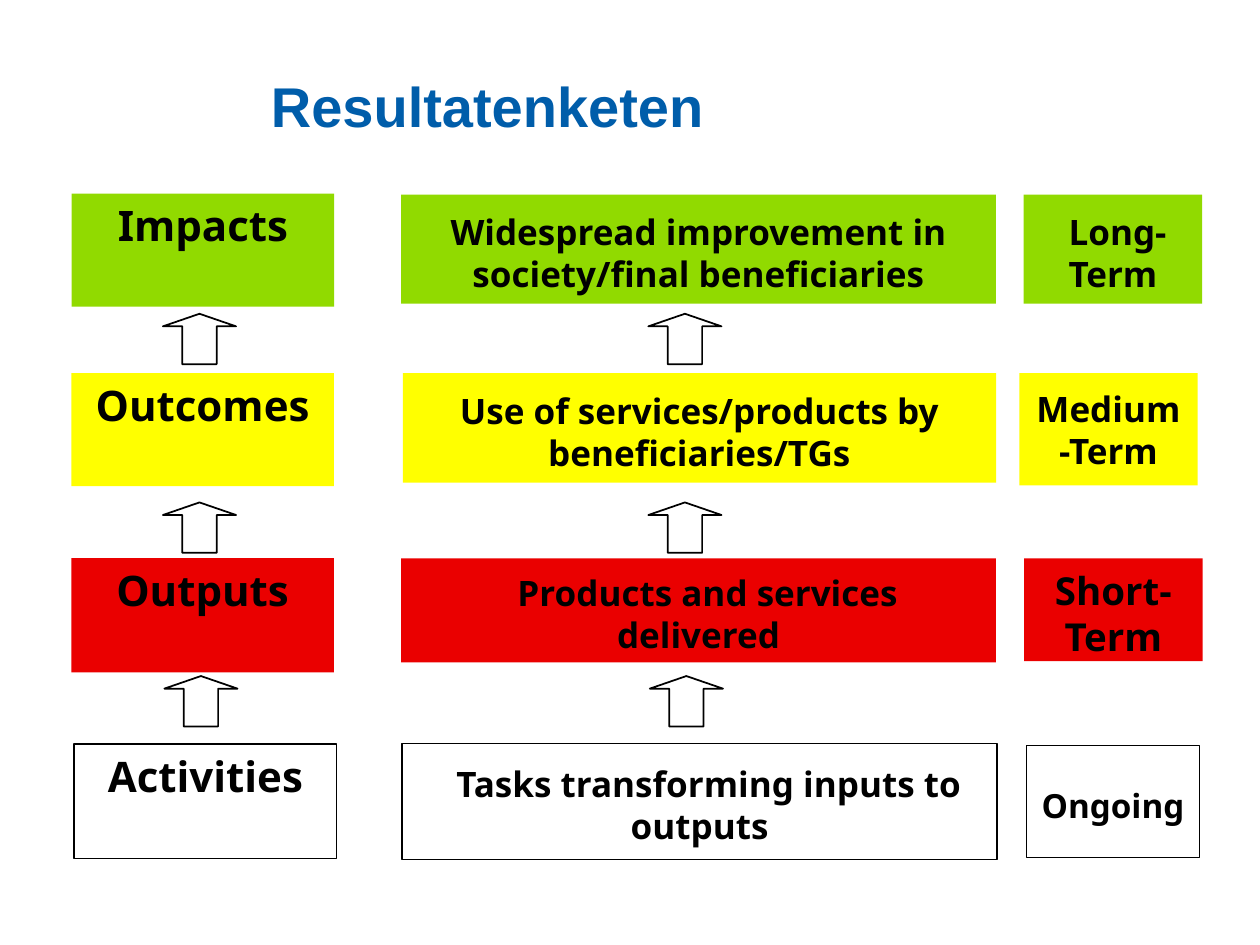
from pptx import Presentation
from pptx.dml.color import RGBColor
from pptx.enum.shapes import MSO_SHAPE as Shape
from pptx.enum.text import MSO_ANCHOR as Anchor, MSO_AUTO_SIZE as AutoSize, PP_ALIGN as Align
from pptx.util import Pt

BLUE = RGBColor(0x00, 0x5D, 0xAA)
GREEN = RGBColor(0x91, 0xDA, 0x00)
YELLOW = RGBColor(0xFF, 0xFF, 0x00)
RED = RGBColor(0xEA, 0x00, 0x00)
BLACK = RGBColor(0x00, 0x00, 0x00)


class ChainSlide:
    title_font = "Arial"
    body_font = "Noto Sans"

    def __init__(self, deck):
        self.page = deck.slides.add_slide(deck.slide_layouts[5])

    def add_text(self, para, text, font, size, color):
        span = para.add_run()
        span.text = text
        span.font.name = font
        span.font.size = Pt(size)
        span.font.bold = True
        span.font.color.rgb = color

    def title(self, text, left, top, width, height):
        box = self.page.shapes.title
        box.left, box.top, box.width, box.height = map(Pt, (left, top, width, height))
        frame = box.text_frame
        frame.auto_size = AutoSize.NONE
        frame.vertical_anchor = Anchor.BOTTOM
        para = frame.paragraphs[0]
        para.alignment = Align.LEFT
        self.add_text(para, text, self.title_font, 32, BLUE)

    def shape(self, kind, place, fill=None, line=None):
        shape = self.page.shapes.add_shape(kind, *map(Pt, place))
        shape.shadow.inherit = False
        if fill is None:
            shape.fill.background()
        else:
            shape.fill.solid()
            shape.fill.fore_color.rgb = fill
        if line is None:
            shape.line.fill.background()
        else:
            shape.line.color.rgb = BLACK
            shape.line.width = Pt(line)
        return shape

    def box(self, text, place, size, fill=None, line=None,
            anchor=Anchor.MIDDLE, inset=7.2, indent=0):
        frame = self.shape(Shape.RECTANGLE, place, fill, line).text_frame
        frame.word_wrap = True
        frame.vertical_anchor = anchor
        frame.margin_left = frame.margin_right = Pt(7.2)
        frame.margin_top, frame.margin_bottom = Pt(inset), Pt(3.6)
        para = frame.paragraphs[0]
        para.alignment = Align.CENTER
        if indent:
            para._p.get_or_add_pPr().set("indent", str(Pt(indent)))
        self.add_text(para, text, self.body_font, size, BLACK)

    def level(self, text, place, fill, line):
        self.box(text, place, 24, fill, line, anchor=Anchor.TOP, inset=3.6)

    def up_arrow(self, left, top):
        arrow = self.shape(Shape.RIGHT_ARROW, (left, top, 28.8, 41.8), line=1)
        arrow.rotation = 270
        arrow.adjustments[0] = 0.47
        arrow.adjustments[1] = 0.25


def main():
    deck = Presentation()
    deck.slide_width, deck.slide_height = Pt(720), Pt(540)
    chain = ChainSlide(deck)
    chain.title("Resultatenketen", 147.6, 28.8, 540, 54)

    levels = [
        ("Impacts", (41, 110.7, 150, 64.6), GREEN, None),
        ("Outcomes", (40.8, 213.2, 150, 64.6), YELLOW, None),
        ("Outputs", (40.8, 318.9, 150, 65.4), RED, None),
        ("Activities", (42.4, 425.2, 150, 65.4), None, 1),
    ]
    for level in levels:
        chain.level(*level)

    descriptions = [
        ("Widespread improvement in society/final beneficiaries",
         (229.2, 111.3, 340, 62.3), GREEN, None, 0),
        ("Use of services/products by beneficiaries/TGs",
         (230.2, 213.2, 339, 62.6), YELLOW, None, 0),
        ("Products and services delivered",
         (229.2, 319.1, 340, 59.4), RED, None, 10.4),
        ("Tasks transforming inputs to outputs",
         (229.8, 424.9, 340, 66.3), None, 0.75, 10.4),
    ]
    for text, place, fill, line, indent in descriptions:
        chain.box(text, place, 20, fill, line, indent=indent)

    terms = [
        ("Long- Term", (585, 111.3, 102, 62.3), 20, GREEN, None, 7.2, 5.2),
        ("Medium-Term", (582.5, 213.2, 102, 64.3), 20, YELLOW, None, 3.6, 0),
        ("Short- Term", (585.2, 319.1, 102, 58.7), 22, RED, None, 7.2, 0),
        ("Ongoing", (586.5, 426, 99, 64.2), 19, None, 0.75, 7.2, 0),
    ]
    for text, place, size, fill, line, inset, indent in terms:
        chain.box(text, place, size, fill, line, inset=inset, indent=indent)

    for left in (99.6, 377):
        for shift, top in ((0, 172.8), (0, 280.6), (0.8, 379.8)):
            chain.up_arrow(left + shift, top)

    deck.save("out.pptx")


if __name__ == "__main__":
    main()
